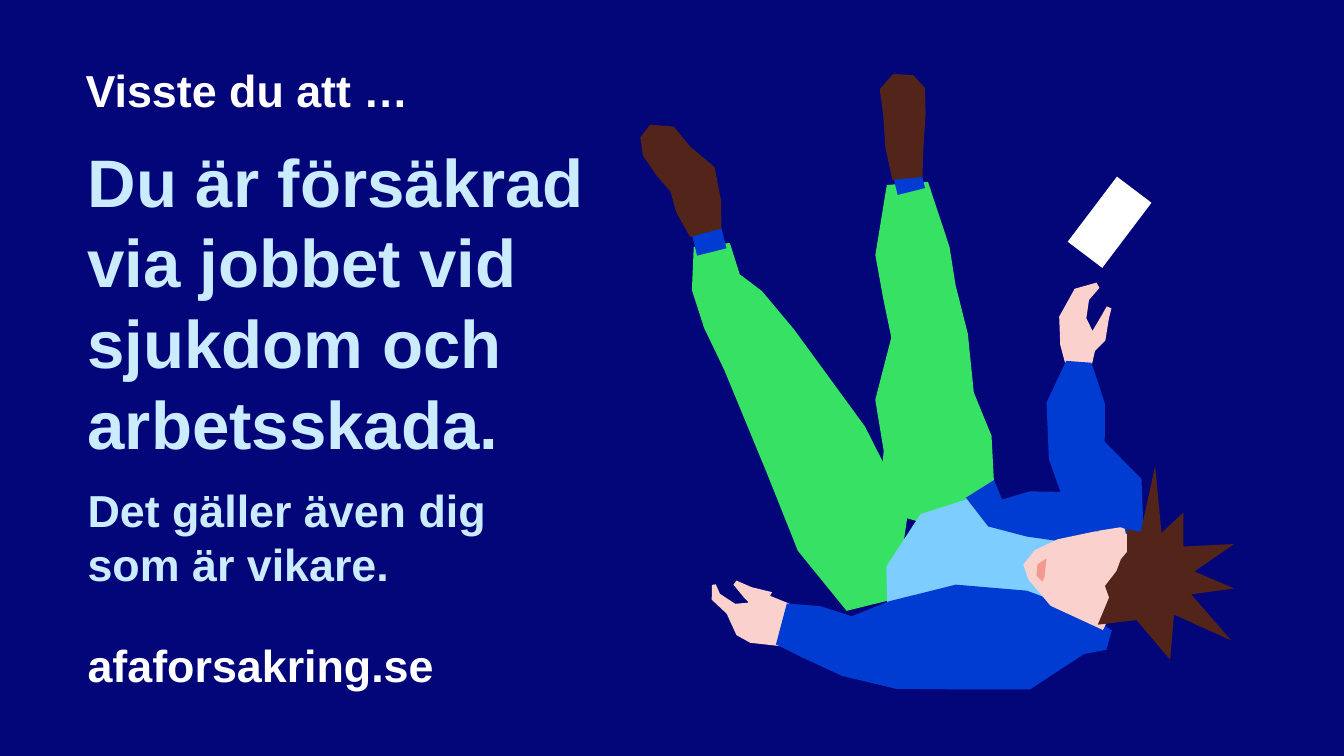
from dataclasses import dataclass
from math import cos, hypot, radians, sin
from typing import NamedTuple

from pptx import Presentation
from pptx.dml.color import RGBColor
from pptx.enum.shapes import MSO_SHAPE
from pptx.enum.text import MSO_AUTO_SIZE
from pptx.shapes.autoshape import Shape
from pptx.shapes.shapetree import GroupShapes, SlideShapes
from pptx.util import Inches, Pt


@dataclass(frozen=True)
class Theme:
    navy: str = "020678"
    white: str = "FFFFFF"
    ice: str = "CBEBFF"
    skin: str = "FAD1CC"
    lips: str = "F3998F"
    sky: str = "7DCDFF"
    blue: str = "003CD2"
    green: str = "37E164"
    brown: str = "52241A"
    font: str = "Arial"
    large: int = 48
    small: int = 32


class Point(NamedTuple):
    x: float
    y: float


class Joint(NamedTuple):
    x: float
    y: float
    width: float


class Spike(NamedTuple):
    angle: float
    reach: float


@dataclass(frozen=True)
class Part:
    color: str
    outline: list[Point]


@dataclass(frozen=True)
class Label:
    left: float
    top: float
    width: float
    height: float
    size: int
    color: str
    lines: tuple[str, ...]


THEME = Theme()


def tube(color: str, *rows: tuple[float, float, float]) -> Part:
    joints = [Joint(*row) for row in rows]
    left: list[Point] = []
    right: list[Point] = []
    for i, joint in enumerate(joints):
        back, ahead = joints[max(i - 1, 0)], joints[min(i + 1, len(joints) - 1)]
        run, rise = ahead.x - back.x, ahead.y - back.y
        scale = joint.width / 2 / hypot(run, rise)
        left.append(Point(joint.x + rise * scale, joint.y - run * scale))
        right.append(Point(joint.x - rise * scale, joint.y + run * scale))
    return Part(color, left + right[::-1])


def patch(color: str, *rows: tuple[float, float]) -> Part:
    return Part(color, [Point(*row) for row in rows])


def star(color: str, heart: Point, inner: float, *rows: tuple[float, float]) -> Part:
    spikes = [Spike(*row) for row in rows]
    polar: list[Spike] = []
    for spike, after in zip(spikes, spikes[1:] + spikes[:1]):
        turn = (after.angle - spike.angle) % 360
        dip = min(inner, spike.reach, after.reach)
        polar += [spike, Spike(spike.angle + turn / 2, dip)]
    return Part(color, [Point(heart.x + reach * cos(radians(angle)), heart.y + reach * sin(radians(angle)))
                        for angle, reach in polar])


LEGS = (
    tube(THEME.green, (7.06, 2.43, 0.36), (7.1, 2.8, 0.5), (7.27, 3.07, 0.68), (7.53, 3.47, 0.8),
         (8.1, 4.48, 1.08), (8.46, 5.27, 1.16), (8.64, 6.0, 0.5)),
    tube(THEME.green, (9.0, 1.82, 0.41), (9.05, 2.49, 0.74), (9.12, 2.9, 0.73), (9.22, 3.33, 0.76),
         (9.17, 3.93, 0.98), (9.3, 4.4, 1.08), (9.3, 4.85, 1.14), (9.2, 5.2, 0.8)),
)
FEET = (
    tube(THEME.blue, (7.0, 2.26, 0.3), (7.06, 2.5, 0.3)),
    tube(THEME.blue, (9.0, 1.74, 0.28), (9.04, 1.9, 0.28)),
    tube(THEME.brown, (6.4, 1.3, 0.16), (6.53, 1.4, 0.42), (6.68, 1.6, 0.44), (6.87, 1.78, 0.5),
         (6.93, 2.05, 0.46), (7.0, 2.31, 0.32)),
    tube(THEME.brown, (8.96, 0.74, 0.2), (8.95, 0.88, 0.45), (8.97, 1.14, 0.42), (8.97, 1.45, 0.38),
         (9.0, 1.77, 0.3)),
)
HANDS = (
    tube(THEME.skin, (10.7, 3.66, 0.24), (10.7, 3.4, 0.37), (10.64, 3.15, 0.27), (10.73, 2.92, 0.18),
         (10.89, 2.83, 0.06)),
    tube(THEME.skin, (10.75, 3.42, 0.25), (10.9, 3.33, 0.16), (10.96, 3.15, 0.08), (11.0, 3.05, 0.05)),
    tube(THEME.skin, (7.82, 6.21, 0.42), (7.48, 6.12, 0.52), (7.36, 6.14, 0.34), (7.25, 6.04, 0.13),
         (7.1, 5.92, 0.1), (7.08, 5.8, 0.04)),
    tube(THEME.skin, (7.6, 5.98, 0.24), (7.42, 5.88, 0.13), (7.29, 5.78, 0.05)),
)
SHIRT = patch(THEME.sky, (8.8, 6.0), (8.79, 5.62), (9.13, 5.1), (9.6, 4.95), (9.8, 5.0), (10.5, 5.3), (10.5, 6.1))
COAT = (
    tube(THEME.blue, (7.75, 6.19, 0.42), (8.05, 6.27, 0.54), (8.4, 6.41, 0.6), (8.85, 6.4, 0.87),
         (9.5, 6.32, 1.04), (10.2, 6.35, 0.98), (10.75, 6.28, 0.42), (11.0, 6.35, 0.2)),
    tube(THEME.blue, (9.72, 4.85, 0.33), (9.87, 5.09, 0.3), (10.2, 5.1, 0.45), (10.6, 5.13, 0.5),
         (11.1, 5.2, 0.5)),
    tube(THEME.blue, (10.7, 3.59, 0.25), (10.67, 4.0, 0.58), (10.68, 4.47, 0.58), (10.95, 4.9, 0.8),
         (11.05, 5.4, 0.6)),
)
HEAD = (
    patch(THEME.skin, (10.15, 5.6), (10.26, 5.46), (10.49, 5.35), (10.87, 5.27), (11.2, 5.3), (11.2, 5.7),
          (10.94, 6.25), (10.42, 6.01), (10.2, 5.75)),
    patch(THEME.lips, (10.34, 5.77), (10.28, 5.71), (10.29, 5.6), (10.38, 5.54), (10.36, 5.72)),
    star(THEME.brown, Point(11.4, 5.72), 0.45, (-87, 1.1), (-62, 0.72), (-21, 0.9), (8, 0.85), (38, 1.03),
         (76, 0.85), (137, 0.7), (168, 0.45), (211, 0.33), (245, 0.52)),
    tube(THEME.skin, (10.9, 5.31, 0.09), (11.12, 5.28, 0.1), (11.16, 5.27, 0.05)),
)
PERSON = (*LEGS, *FEET, *HANDS, SHIRT, *COAT, *HEAD)

LABELS = (
    Label(0.75, 0.57, 11.18, 0.64, THEME.small, THEME.white, ("Visste du att …",)),
    Label(0.77, 1.34, 5.34, 3.33, THEME.large, THEME.ice,
          ("Du är försäkrad via jobbet vid sjukdom och arbetsskada.",)),
    Label(0.77, 4.74, 4.46, 1.18, THEME.small, THEME.ice, ("Det gäller även dig", "som är vikare.")),
    Label(0.77, 6.28, 4.78, 0.64, THEME.small, THEME.white, ("afaforsakring.se",)),
)


def paint(shape: Shape, color: str) -> None:
    shape.shadow.inherit = False
    shape.fill.solid()
    shape.fill.fore_color.rgb = RGBColor.from_string(color)
    shape.line.fill.background()


def draw_part(shapes: GroupShapes, part: Part) -> None:
    first, *rest = [(Inches(spot.x), Inches(spot.y)) for spot in part.outline]
    pen = shapes.build_freeform(*first)
    pen.add_line_segments(rest, close=True)
    paint(pen.convert_to_shape(), part.color)


def draw_card(shapes: GroupShapes) -> None:
    card = shapes.add_shape(MSO_SHAPE.RECTANGLE, Inches(10.79), Inches(1.8), Inches(0.43), Inches(0.81))
    card.rotation = 37.1
    paint(card, THEME.white)


def draw_label(shapes: SlideShapes, label: Label) -> None:
    box = shapes.add_textbox(*map(Inches, (label.left, label.top, label.width, label.height)))
    frame = box.text_frame
    frame.word_wrap = True
    frame.auto_size = MSO_AUTO_SIZE.SHAPE_TO_FIT_TEXT
    frame.text = "\n".join(label.lines)
    style = {"name": THEME.font, "size": Pt(label.size), "bold": True}
    for para in frame.paragraphs:
        for run in para.runs:
            for name, value in style.items():
                setattr(run.font, name, value)
            run.font.color.rgb = RGBColor.from_string(label.color)


def main() -> None:
    deck = Presentation()
    deck.slide_width, deck.slide_height = Inches(13.33), Inches(7.5)
    slide = deck.slides.add_slide(deck.slide_layouts[6])
    slide.background.fill.solid()
    slide.background.fill.fore_color.rgb = RGBColor.from_string(THEME.navy)
    group = slide.shapes.add_group_shape().shapes
    for part in PERSON:
        draw_part(group, part)
    draw_card(group)
    for label in LABELS:
        draw_label(slide.shapes, label)
    deck.save("out.pptx")


if __name__ == "__main__":
    main()
